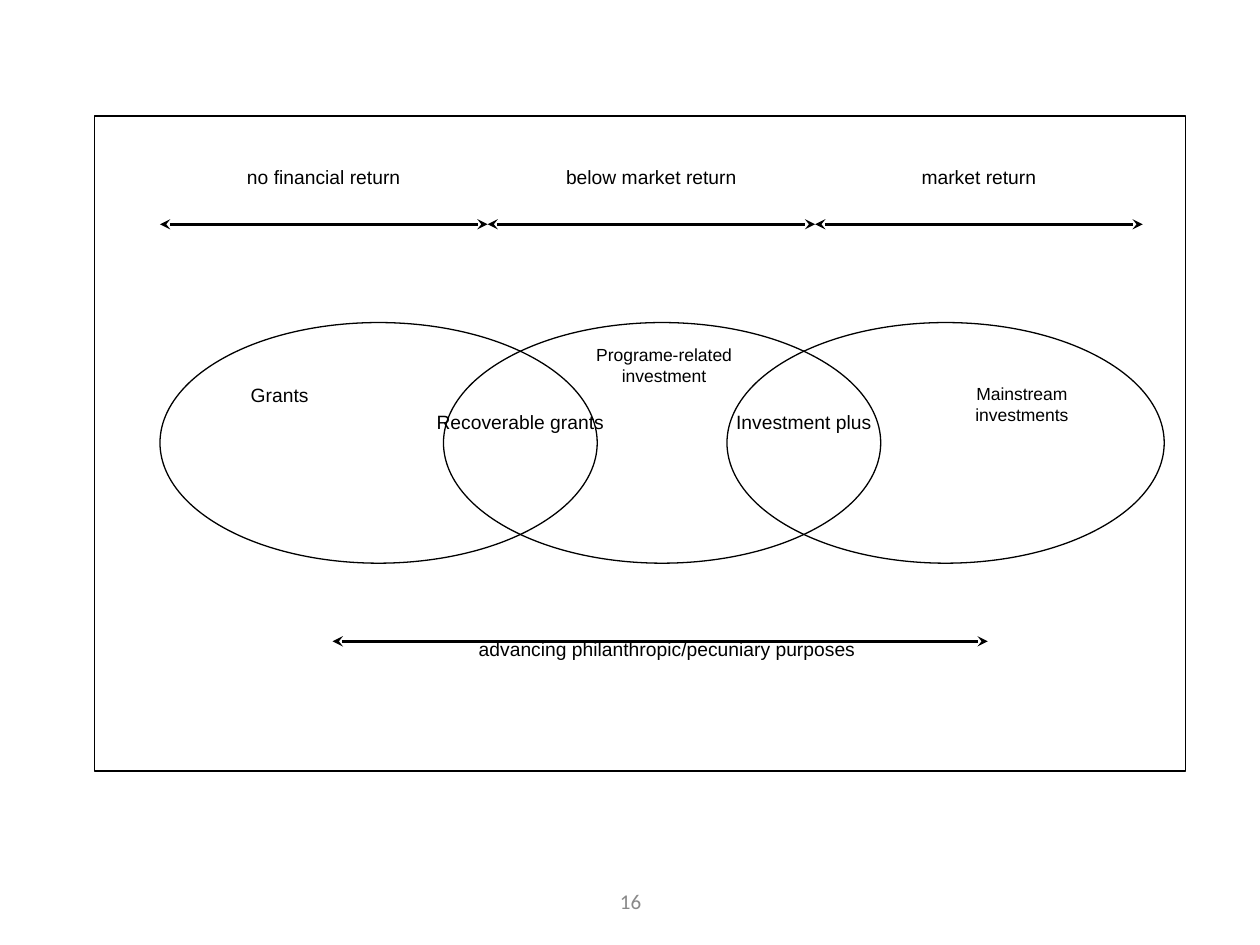
import pptx
import pptx.util
import pptx.dml.color
import pptx.enum.shapes
import pptx.enum.text
import pptx.oxml.ns
import lxml.etree
from dataclasses import dataclass

Inches = pptx.util.Inches
Pt = pptx.util.Pt
RGB = pptx.dml.color.RGBColor
ShapeType = pptx.enum.shapes.MSO_SHAPE
Anchor = pptx.enum.text.MSO_ANCHOR


@dataclass(frozen=True)
class Theme:
    ink: RGB = RGB(0, 0, 0)
    paper: RGB = RGB(255, 255, 255)
    muted: RGB = RGB(0x89, 0x89, 0x89)
    body_font: str = "Arial"
    number_font: str = "Calibri"
    body_size: float = 11
    small_size: float = 10
    number_size: float = 12
    outline: float = 0.75
    arrow: float = 1.75


THEME = Theme()
RETURNS = ["no financial return", "below market return", "market return"]
PURPOSE = "advancing philanthropic/pecuniary purposes"
PAGE_NUMBER = "16"
FIELDS = [
    ("Grants", 1.44, 2.99, THEME.body_size),
    ("Recoverable grants", 3.35, 3.21, THEME.body_size),
    ("Investment plus", 5.6, 3.21, THEME.body_size),
    ("Mainstream investments", 7.33, 2.99, THEME.small_size),
    ("Programe-related investment", 4.49, 2.68, THEME.small_size),
]
FRAME = (0.75, 0.92, 8.66, 5.2)
LEFT = 1.27
RETURN_WIDTH = 2.6
RETURN_TOP, RETURN_ARROW_Y = 1.26, 1.78
ELLIPSE_STEP, ELLIPSE_TOP = 2.25, 2.56
ELLIPSE_WIDTH, ELLIPSE_HEIGHT = 3.47, 1.91
FIELD_WIDTH, FIELD_HEIGHT = 1.56, 0.87
LABEL_HEIGHT = 0.52


def add_outline(slide, kind, box, filled=False):
    shape = slide.shapes.add_shape(kind, *map(Inches, box))
    shape.shadow.inherit = False
    if filled:
        shape.fill.solid()
        shape.fill.fore_color.rgb = THEME.paper
    else:
        shape.fill.background()
    shape.line.color.rgb = THEME.ink
    shape.line.width = Pt(THEME.outline)


def add_label(slide, text, box, size=THEME.body_size, font=THEME.body_font,
              color=THEME.ink, anchor=Anchor.TOP):
    frame = slide.shapes.add_textbox(*map(Inches, box)).text_frame
    frame.word_wrap = True
    frame.vertical_anchor = anchor
    paragraph = frame.paragraphs[0]
    paragraph.text = text
    paragraph.alignment = pptx.enum.text.PP_ALIGN.CENTER
    paragraph.font.name = font
    paragraph.font.size = Pt(size)
    paragraph.font.color.rgb = color


def add_double_arrow(slide, left, right, y):
    connector = slide.shapes.add_connector(
        pptx.enum.shapes.MSO_CONNECTOR.STRAIGHT,
        Inches(left), Inches(y), Inches(right), Inches(y))
    connector.line.color.rgb = THEME.ink
    connector.line.width = Pt(THEME.arrow)
    line = connector.line._get_or_add_ln()
    for end in ("a:headEnd", "a:tailEnd"):
        lxml.etree.SubElement(line, pptx.oxml.ns.qn(end), type="stealth")
    properties = connector._element.spPr
    lxml.etree.SubElement(properties, pptx.oxml.ns.qn("a:effectLst"))


def main():
    presentation = pptx.Presentation()
    presentation.slide_width = Inches(10)
    presentation.slide_height = Inches(7.5)
    slide = presentation.slides.add_slide(presentation.slide_layouts[6])

    add_label(slide, PAGE_NUMBER, (3.42, 6.95, 3.17, 0.4), THEME.number_size,
              THEME.number_font, THEME.muted, Anchor.MIDDLE)
    add_outline(slide, ShapeType.RECTANGLE, FRAME, filled=True)
    for index, text in enumerate(RETURNS):
        add_outline(slide, ShapeType.OVAL, (LEFT + index * ELLIPSE_STEP, ELLIPSE_TOP,
                                            ELLIPSE_WIDTH, ELLIPSE_HEIGHT))
        left = LEFT + index * RETURN_WIDTH
        add_double_arrow(slide, left, left + RETURN_WIDTH, RETURN_ARROW_Y)
        add_label(slide, text, (left, RETURN_TOP, RETURN_WIDTH, LABEL_HEIGHT))

    add_double_arrow(slide, 2.64, 7.84, 5.09)
    add_label(slide, PURPOSE, (2.87, 5.01, 4.85, LABEL_HEIGHT))
    for text, left, top, size in FIELDS:
        add_label(slide, text, (left, top, FIELD_WIDTH, FIELD_HEIGHT), size)

    presentation.save("out.pptx")


if __name__ == "__main__":
    main()
